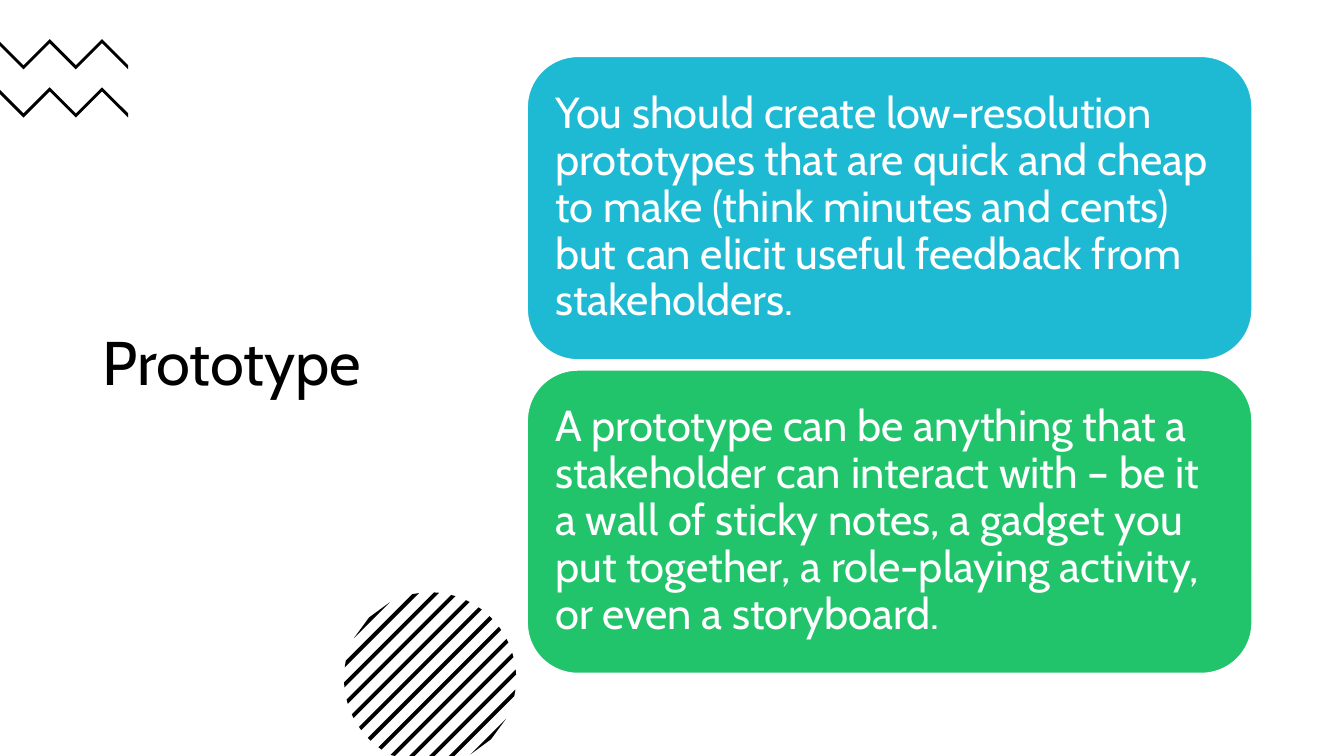
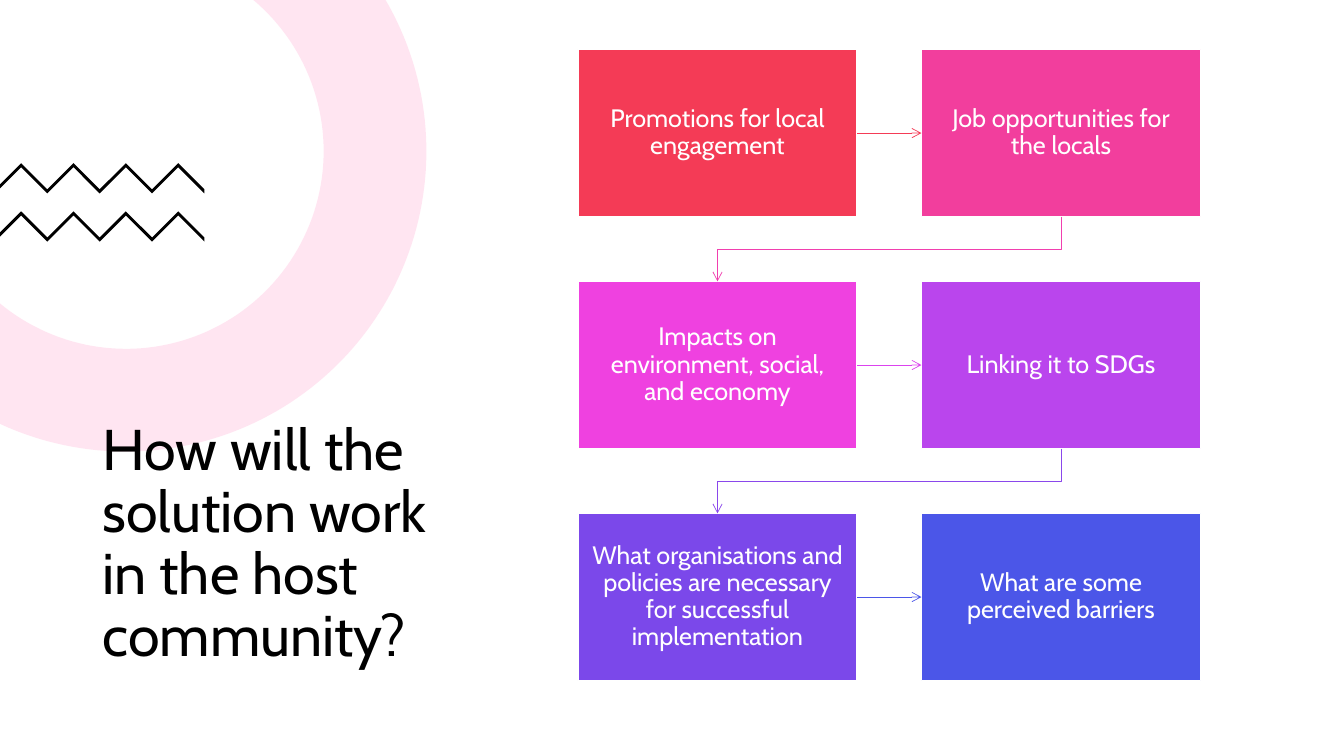
import itertools
import math

import pptx
import pptx.dml.color
import pptx.enum.shapes
import pptx.enum.text
import pptx.oxml
import pptx.oxml.ns
import pptx.util

Pt = pptx.util.Pt
qn = pptx.oxml.ns.qn
ALIGN = pptx.enum.text.PP_ALIGN
SHAPE = pptx.enum.shapes.MSO_SHAPE
CONNECTOR = pptx.enum.shapes.MSO_CONNECTOR

SLIDE_W, SLIDE_H = 960, 540
FONT = "Cabin"
COLORS = {
    "ink": "000000",
    "paper": "FFFFFF",
    "ring": "FF80BD",
    "cyan": "1EB9D3",
    "green": "21C46B",
    "red": "F43B56",
    "pink": "F23E9D",
    "magenta": "EF41E0",
    "purple": "BA45ED",
    "violet": "7B48EA",
    "blue": "4B56E8",
    "pink_arrow": "F13FAF",
    "purple_arrow": "DB43EE",
    "violet_arrow": "8A47EB",
}
PROTOTYPE_NOTES = [
    ("You should create low-resolution prototypes that are quick and cheap to make "
     "(think minutes and cents) but can elicit useful feedback from stakeholders.", "cyan"),
    ("A prototype can be anything that a stakeholder can interact with – be it a wall "
     "of sticky notes, a gadget you put together, a role-playing activity, or even a "
     "storyboard.", "green"),
]
COMMUNITY_STEPS = [
    ("Promotions for local engagement", "red"),
    ("Job opportunities for the locals", "pink"),
    ("Impacts on environment, social, and economy", "magenta"),
    ("Linking it to SDGs", "purple"),
    ("What organisations and policies are necessary for successful implementation", "violet"),
    ("What are some perceived barriers", "blue"),
]
ARROW_COLORS = ["red", "pink_arrow", "purple_arrow", "violet_arrow", "blue"]


def rgb(name):
    return pptx.dml.color.RGBColor.from_string(COLORS[name])


def set_text(sp, text, size, color, align, inset_x, inset_y):
    tf = sp.text_frame
    tf.text = text
    tf.word_wrap = True
    tf.auto_size = pptx.enum.text.MSO_AUTO_SIZE.NONE
    tf.vertical_anchor = pptx.enum.text.MSO_ANCHOR.MIDDLE
    tf.margin_left = tf.margin_right = Pt(inset_x)
    tf.margin_top = tf.margin_bottom = Pt(inset_y)
    p = tf.paragraphs[0]
    p.alignment = align
    p.line_spacing = 0.9
    r = p.runs[0]
    r.font.name = FONT
    r.font.size = Pt(size)
    r.font.color.rgb = rgb(color)


def add_title(s, text, size, top, height):
    """Fill the title placeholder and bring it in front of the decoration."""
    sp = s.shapes.title
    sp.left, sp.top, sp.width, sp.height = Pt(66), Pt(top), Pt(252), Pt(height)
    set_text(sp, text, size, "ink", ALIGN.LEFT, 7.2, 3.6)
    s.shapes._spTree.append(sp._element)


def add_box(s, kind, left, top, width, height, fill):
    sp = s.shapes.add_shape(kind, Pt(left), Pt(top), Pt(width), Pt(height))
    sp.shadow.inherit = False
    sp.fill.solid()
    sp.fill.fore_color.rgb = rgb(fill)
    sp.line.color.rgb = rgb("paper")
    sp.line.width = Pt(1)
    return sp


def add_polygon(s, points, fill):
    (x0, y0), *rest = [(Pt(x), Pt(y)) for x, y in points]
    builder = s.shapes.build_freeform(x0, y0)
    builder.add_line_segments(rest, close=True)
    sp = builder.convert_to_shape()
    sp.shadow.inherit = False
    sp.fill.solid()
    sp.fill.fore_color.rgb = rgb(fill)
    sp.line.fill.background()
    return sp


def add_zigzags(s, right, top):
    """Two 45-degree zigzag bands running from the left slide edge to right."""
    step, thickness, pitch = 18.7, 2.9, 34.4
    count = int(right // step)
    points = [(right - k * step, top + step * (k % 2 == 0)) for k in range(count + 1)]
    x, y = points[-1]
    points.append((0, y - x if count % 2 == 0 else y + x))
    for dy in (0, pitch):
        upper = [(x, y + dy) for x, y in points]
        lower = [(x, y + thickness) for x, y in reversed(upper)]
        add_polygon(s, upper + lower, "ink")


def add_striped_circle(s, cx, cy, radius):
    """Diagonal stripes that fill a circle, cut at the bottom of the slide."""
    pitch, half_thickness = 10.03, 1.4
    diag = math.sqrt(0.5)

    def chord(offset):
        half = math.sqrt(max(radius ** 2 - offset ** 2, 0))
        low = max(-half, offset - (SLIDE_H - cy) / diag)
        return [(cx + (offset + t) * diag, cy + (offset - t) * diag) for t in (low, half)]

    for k in range(-6, 7):
        near = chord(k * pitch - half_thickness)
        far = chord(k * pitch + half_thickness)
        add_polygon(s, near + far[::-1], "ink")


def add_ring(s, cx, cy, outer, inner):
    """A pale ring cut by the left and top edges of the slide."""
    steps = 90

    def arc(radius):
        start, end = math.asin(-cy / radius), math.acos(-cx / radius)
        angles = [start + (end - start) * i / steps for i in range(steps + 1)]
        return [(cx + radius * math.cos(a), cy + radius * math.sin(a)) for a in angles]

    sp = add_polygon(s, arc(outer) + arc(inner)[::-1], "ring")
    color = sp._element.spPr.find(qn("a:solidFill"))[0]
    color.append(pptx.oxml.parse_xml(
        f'<a:alpha {pptx.oxml.ns.nsdecls("a")} val="20000"/>'))


def add_arrow(s, start, end, color):
    """Join two boxes: straight along a row, bent down to the next row."""
    same_row = start.top == end.top
    kind = CONNECTOR.STRAIGHT if same_row else CONNECTOR.ELBOW
    c = s.shapes.add_connector(kind, 0, 0, 0, 0)
    c.begin_connect(start, 3 if same_row else 2)
    c.end_connect(end, 1 if same_row else 0)
    spPr = c._element.spPr
    if not same_row:
        # A quarter turn makes the bent line leave downwards.
        mid_x, mid_y = c.left + c.width // 2, c.top + c.height // 2
        c.width, c.height = c.height, c.width
        c.left, c.top = mid_x - c.width // 2, mid_y - c.height // 2
        xfrm = spPr.find(qn("a:xfrm"))
        xfrm.set("rot", "5400000")
        xfrm.set("flipH", "0")
    c.line.color.rgb = rgb(color)
    c.line.width = Pt(0.5)
    ns = pptx.oxml.ns.nsdecls("a")
    spPr.find(qn("a:ln")).append(pptx.oxml.parse_xml(f'<a:tailEnd {ns} type="arrow"/>'))
    spPr.append(pptx.oxml.parse_xml(f"<a:effectLst {ns}/>"))


def add_prototype_slide(prs):
    s = prs.slides.add_slide(prs.slide_layouts[5])
    add_striped_circle(s, 307.2, 484.6, 61.5)
    add_title(s, "Prototype", 44, 94.3, 333.4)
    add_zigzags(s, 91.6, 28)
    for i, (text, fill) in enumerate(PROTOTYPE_NOTES):
        sp = add_box(s, SHAPE.ROUNDED_RECTANGLE, 376.6, 40.3 + i * 224, 517.7, 216.7, fill)
        set_text(sp, text, 31, "paper", ALIGN.LEFT, 9.4, 9.4)


def add_community_slide(prs):
    s = prs.slides.add_slide(prs.slide_layouts[5])
    add_ring(s, 90, 108, 214.6, 141.2)
    add_title(s, "How will the solution work in the host community?", 41, 291.6, 195.1)
    add_zigzags(s, 146, 116.6)
    boxes = []
    for i, (text, fill) in enumerate(COMMUNITY_STEPS):
        row, col = divmod(i, 2)
        sp = add_box(s, SHAPE.RECTANGLE, 412.8 + col * 245.4, 35.3 + row * 165.7,
                     199.4, 119.5, fill)
        set_text(sp, text, 18, "paper", ALIGN.CENTER, 10, 10)
        boxes.append(sp)
    for (start, end), color in zip(itertools.pairwise(boxes), ARROW_COLORS):
        add_arrow(s, start, end, color)


def main():
    prs = pptx.Presentation()
    prs.slide_width, prs.slide_height = Pt(SLIDE_W), Pt(SLIDE_H)
    add_prototype_slide(prs)
    add_community_slide(prs)
    prs.save("out.pptx")


if __name__ == "__main__":
    main()
